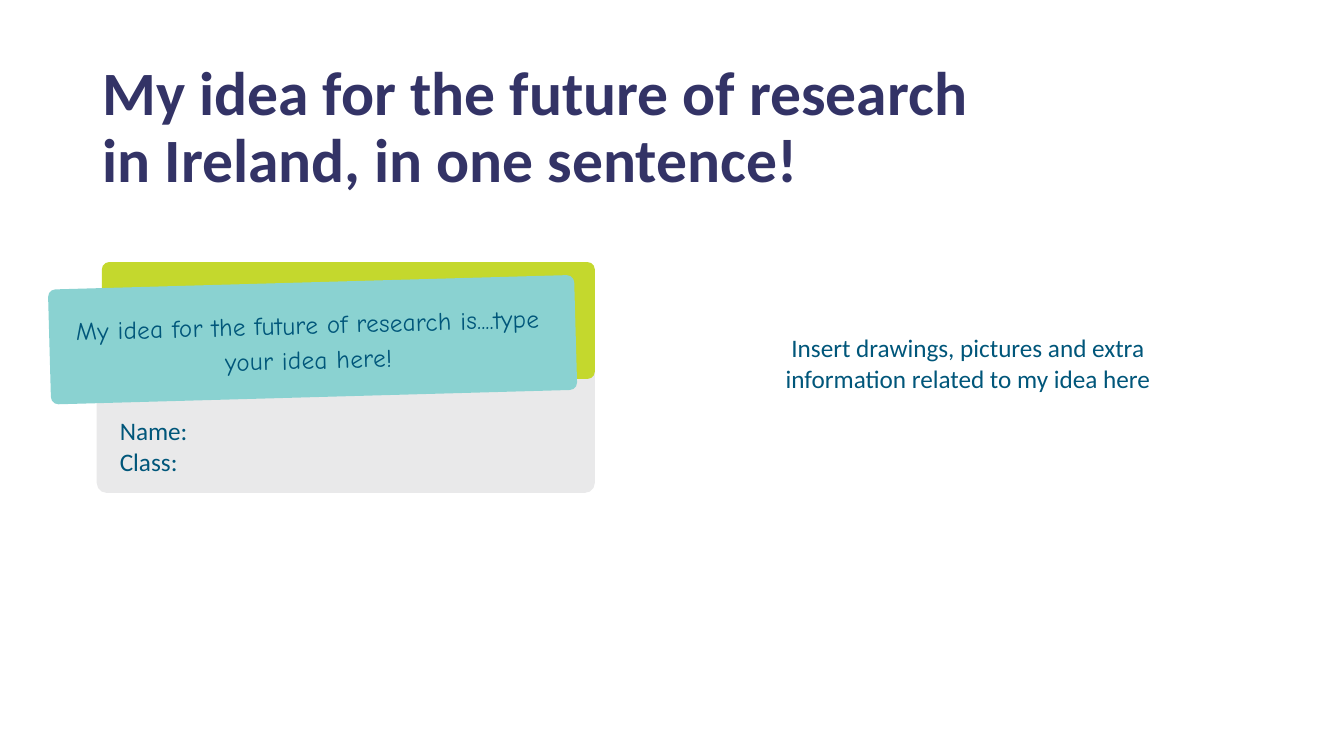
from dataclasses import dataclass

from pptx import Presentation
from pptx.dml.color import RGBColor
from pptx.enum.shapes import MSO_SHAPE as Shape
from pptx.enum.text import MSO_AUTO_SIZE as AutoSize, PP_ALIGN as Align
from pptx.util import Inches, Pt


@dataclass(frozen=True)
class Theme:
    title_color: str = "333366"
    text_color: str = "00567A"
    card: str = "E9E9EA"
    lime: str = "C4D82D"
    teal: str = "8AD2D1"
    font: str = "Calibri"
    note_font: str = "Comic Neue"
    title_size: int = 44
    body_size: int = 18
    corner: float = 0.064
    tilt: float = 358.4


THEME = Theme()


def add_text(slide, box, lines, *, size=THEME.body_size, color=THEME.text_color,
             font=THEME.font, bold=False, align=Align.LEFT, line_spacing=None,
             space_after=None, tracking=None, rotation=0, grow=False):
    """Add a wrapped text box with one paragraph per line."""
    shape = slide.shapes.add_textbox(*map(Inches, box))
    shape.rotation = rotation
    frame = shape.text_frame
    frame.word_wrap = True
    frame.auto_size = AutoSize.SHAPE_TO_FIT_TEXT if grow else AutoSize.NONE
    for index, line in enumerate(lines):
        paragraph = frame.paragraphs[0] if index == 0 else frame.add_paragraph()
        paragraph.alignment = align
        paragraph.line_spacing = line_spacing
        paragraph.space_after = space_after
        run = paragraph.add_run()
        run.text = line
        run.font.name = font
        run.font.size = Pt(size)
        run.font.bold = bold
        run.font.color.rgb = RGBColor.from_string(color)
        if tracking is not None:  # hundredths of a point
            run._r.get_or_add_rPr().set("spc", str(tracking))
    return shape


def add_panel(slide, box, fill, rotation=0):
    """Add a plain rounded panel."""
    shape = slide.shapes.add_shape(Shape.ROUNDED_RECTANGLE, *map(Inches, box))
    shape.adjustments[0] = THEME.corner
    shape.rotation = rotation
    shape.shadow.inherit = False
    shape.fill.solid()
    shape.fill.fore_color.rgb = RGBColor.from_string(fill)
    shape.line.fill.background()
    return shape


def add_title(slide, box):
    add_text(slide, box,
             ["My idea for the future of research in Ireland, in one sentence!"],
             size=THEME.title_size, color=THEME.title_color, bold=True,
             line_spacing=0.9)


def add_idea_card(slide, box):
    left, top, width, height = box

    # Grey card with a lime header
    add_panel(slide, (left, top + 0.75, width, height - 0.75), THEME.card)
    add_panel(slide, (left + 0.05, top, width - 0.05, 1.16), THEME.lime)

    # Tilted note
    add_panel(slide, (left - 0.47, top + 0.2, 5.22, 1.14), THEME.teal, THEME.tilt)
    add_text(slide, (left - 0.41, top + 0.37, 5.01, 0.79),
             ["My idea for the future of research is....type your idea here!"],
             font=THEME.note_font, align=Align.CENTER, line_spacing=Pt(25),
             tracking=20, rotation=THEME.tilt, grow=True)

    # Pupil details
    add_text(slide, (left + 0.13, top + 1.51, 3.96, 0.76), ["Name:", "Class:"],
             line_spacing=0.9, space_after=Pt(2))


def add_drawing_prompt(slide, box):
    add_text(slide, box,
             ["Insert drawings, pictures and extra information related to my idea here"],
             align=Align.CENTER, grow=True)


def main():
    presentation = Presentation()
    presentation.slide_width = Inches(13.33)
    presentation.slide_height = Inches(7.5)
    slide = presentation.slides.add_slide(presentation.slide_layouts[6])
    add_idea_card(slide, (0.96, 2.6, 4.94, 2.29))
    add_drawing_prompt(slide, (7.64, 3.25, 3.92, 0.71))
    add_title(slide, (0.92, 0.57, 8.97, 1.31))
    presentation.save("out.pptx")


if __name__ == "__main__":
    main()
